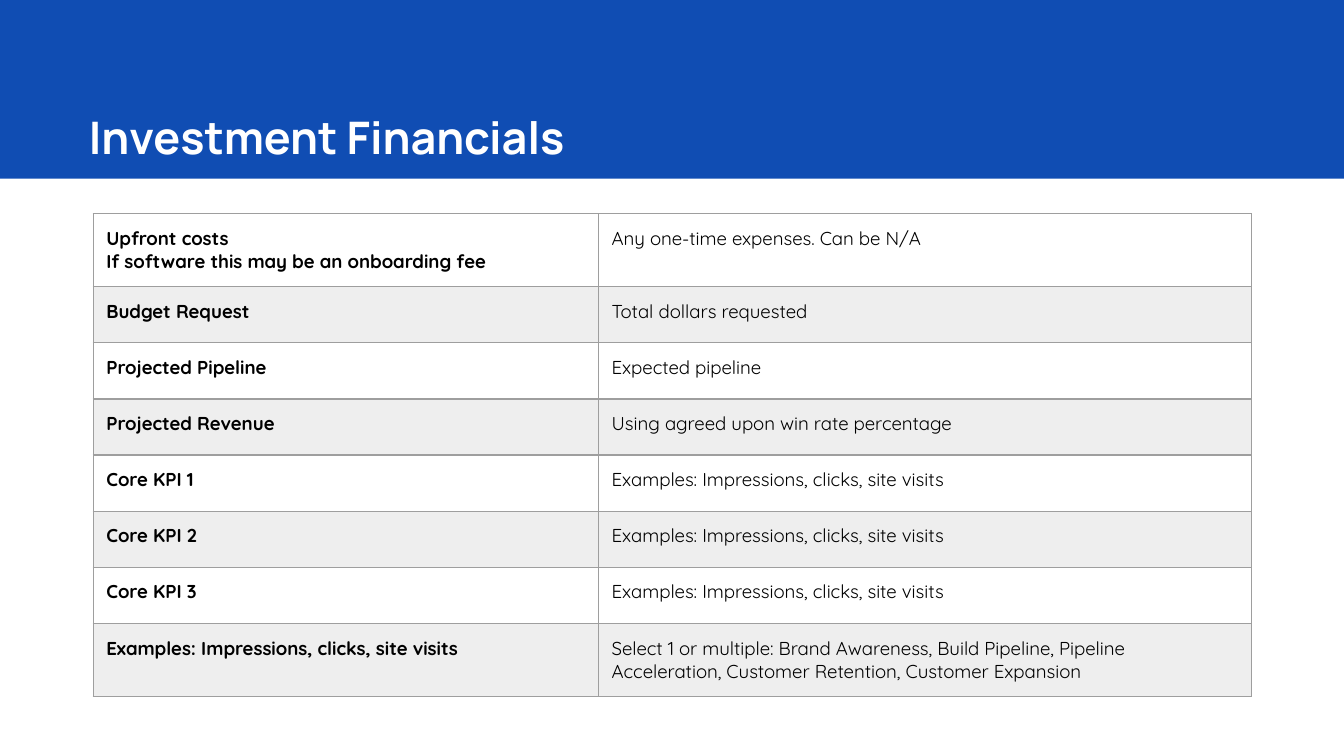
from copy import deepcopy

from lxml import etree
from pptx import Presentation
from pptx import util as u
from pptx.dml.color import RGBColor
from pptx.enum import shapes, text
from pptx.oxml import ns

COLORS = {
    "banner": "104DB3",
    "title": "FFFFFF",
    "text": "000000",
    "band": "EEEEEE",
    "border": "9E9E9E",
}
MARGINS = ("margin_left", "margin_top", "margin_right", "margin_bottom")
COLUMN_WIDTHS = (9.55, 12.34)
ROW_HEIGHT = 1.06
ROWS = [
    ("Upfront costs\nIf software this may be an onboarding fee",
     "Any one-time expenses. Can be N/A"),
    ("Budget Request", "Total dollars requested"),
    ("Projected Pipeline", "Expected pipeline"),
    ("Projected Revenue", "Using agreed upon win rate percentage"),
    ("Core KPI 1", "Examples: Impressions, clicks, site visits"),
    ("Core KPI 2", "Examples: Impressions, clicks, site visits"),
    ("Core KPI 3", "Examples: Impressions, clicks, site visits"),
    ("Examples: Impressions, clicks, site visits",
     "Select 1 or multiple: Brand Awareness, Build Pipeline, Pipeline "
     "Acceleration, Customer Retention, Customer Expansion"),
]


def set_values(target, values):
    for name, value in values.items():
        setattr(target, name, value)


def write_text(paragraph, content, color, font_values):
    paragraph.text = content
    paragraph.alignment = text.PP_ALIGN.LEFT
    for run in paragraph.runs:
        set_values(run.font, font_values)
        run.font.color.rgb = RGBColor.from_string(COLORS[color])
    for line_break in paragraph._p.findall(ns.qn("a:br")):
        line_break.append(deepcopy(paragraph.runs[0].font._rPr))


def add_banner(slide):
    banner = slide.shapes.add_shape(
        shapes.MSO_SHAPE.RECTANGLE, 0, 0, u.Cm(25.4), u.Cm(3.38))
    banner.shadow.inherit = False
    banner.fill.solid()
    banner.fill.fore_color.rgb = RGBColor.from_string(COLORS["banner"])
    banner.line.fill.background()
    banner.element.getparent().insert(2, banner.element)


def fill_title(slide, content):
    title = slide.shapes.title
    set_values(title, {"left": u.Cm(1.68), "top": u.Cm(1.78),
                       "width": u.Cm(22.07), "height": u.Cm(1.6)})
    set_values(title.text_frame, {
        "vertical_anchor": text.MSO_ANCHOR.MIDDLE,
        "auto_size": text.MSO_AUTO_SIZE.NONE,
        "word_wrap": True,
        **dict.fromkeys(MARGINS, 0),
    })
    write_text(title.text_frame.paragraphs[0], content, "title",
               {"name": "Manrope", "size": u.Pt(24), "bold": True})


def add_borders(cell):
    properties = cell._tc.get_or_add_tcPr()
    for side in ("lnL", "lnR", "lnT", "lnB"):
        line = etree.SubElement(properties, ns.qn(f"a:{side}"), w=str(u.Pt(0.75)))
        fill = etree.SubElement(line, ns.qn("a:solidFill"))
        etree.SubElement(fill, ns.qn("a:srgbClr"), val=COLORS["border"])


def format_cell(cell, content, is_label, is_banded):
    set_values(cell, dict.fromkeys(MARGINS, u.Cm(0.25)))
    write_text(cell.text_frame.paragraphs[0], content, "text",
               {"name": "Quicksand", "size": u.Pt(10), "bold": is_label})
    add_borders(cell)
    if is_banded:
        cell.fill.solid()
        cell.fill.fore_color.rgb = RGBColor.from_string(COLORS["band"])
    else:
        cell.fill.background()


def add_financials_table(slide):
    table = slide.shapes.add_table(
        len(ROWS), len(COLUMN_WIDTHS), u.Cm(1.76), u.Cm(4.04),
        u.Cm(sum(COLUMN_WIDTHS)), u.Cm(ROW_HEIGHT * len(ROWS))).table
    set_values(table, {"first_row": False, "horz_banding": False})
    for column, width in zip(table.columns, COLUMN_WIDTHS):
        column.width = u.Cm(width)
    for row_index, contents in enumerate(ROWS):
        table.rows[row_index].height = u.Cm(ROW_HEIGHT)
        for column_index, content in enumerate(contents):
            format_cell(table.cell(row_index, column_index), content,
                        column_index == 0, row_index % 2 == 1)


def main():
    presentation = Presentation()
    set_values(presentation, {"slide_width": u.Cm(25.4),
                              "slide_height": u.Cm(14.29)})
    slide = presentation.slides.add_slide(presentation.slide_layouts[0])
    subtitle = slide.placeholders[1].element
    subtitle.getparent().remove(subtitle)
    add_banner(slide)
    fill_title(slide, "Investment Financials")
    add_financials_table(slide)
    presentation.save("out.pptx")


if __name__ == "__main__":
    main()
